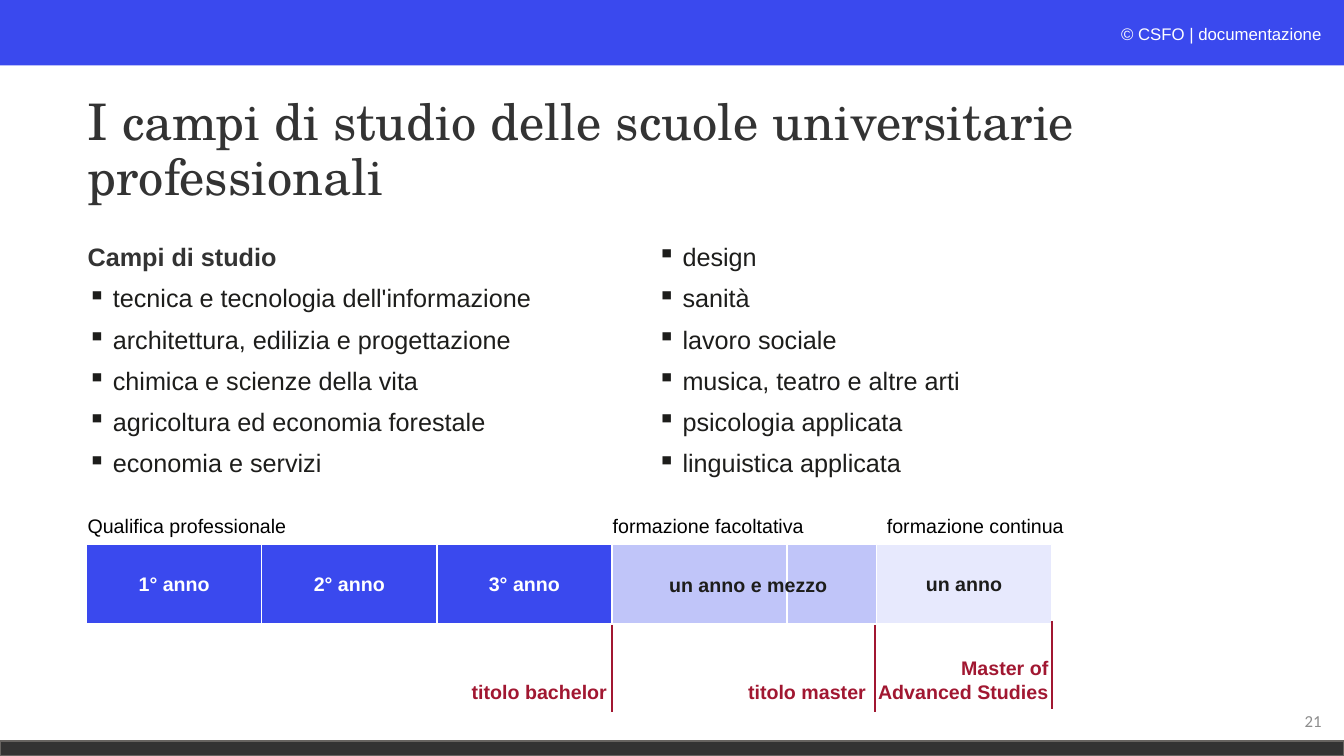
from dataclasses import dataclass

from lxml import etree
from pptx import Presentation
from pptx.dml.color import RGBColor
from pptx.enum.shapes import MSO_CONNECTOR, MSO_SHAPE
from pptx.enum.text import MSO_ANCHOR, PP_ALIGN
from pptx.oxml.ns import qn
from pptx.slide import Slide
from pptx.text.text import TextFrame, _Paragraph, _Run
from pptx.util import Emu, Inches, Pt

RECTANGLE = MSO_SHAPE.RECTANGLE
STRAIGHT = MSO_CONNECTOR.STRAIGHT
TOP, MIDDLE = MSO_ANCHOR.TOP, MSO_ANCHOR.MIDDLE
LEFT, CENTER, RIGHT = PP_ALIGN.LEFT, PP_ALIGN.CENTER, PP_ALIGN.RIGHT

SLIDE_WIDTH, SLIDE_HEIGHT = Inches(13.33), Inches(7.5)
TIMELINE_LEFT, YEAR = 6.45, 13.03
BAR_TOP, BAR_HEIGHT = 72, 10.53
MARGIN, CONTENT_WIDTH = 5.78, 86.25
LABEL_TOP, DEGREE_TOP, LABEL_HEIGHT = 67.33, 89.33, 4.53

COLORS = {
    "blue": "3A49EE",
    "lavender": "C0C5F9",
    "pale": "E7E9FD",
    "charcoal": "333333",
    "border": "666360",
    "ink": "1D1D1B",
    "black": "000000",
    "gray": "8C8C8C",
    "red": "A11731",
    "white": "FFFFFF",
    "near_white": "FCFDFE",
}

FORMATS = {
    "title": {"name": "TeX Gyre Schola", "size": Pt(36)},
    "heading": {"name": "Arial", "size": Pt(18), "bold": True},
    "field": {"name": "Arial", "size": Pt(18), "bold": False},
    "label": {"name": "Arial", "size": Pt(14), "bold": False},
    "strong": {"name": "Arial", "size": Pt(14), "bold": True},
    "copyright": {"name": "Arial", "size": Pt(12), "italic": True},
    "source": {"name": "Arial", "size": Pt(12), "italic": False},
    "number": {"name": "Calibri", "size": Pt(12)},
}

STUDY_FIELDS = (
    "tecnica e tecnologia dell'informazione",
    "architettura, edilizia e progettazione",
    "chimica e scienze della vita",
    "agricoltura ed economia forestale",
    "economia e servizi",
    "design",
    "sanità",
    "lavoro sociale",
    "musica, teatro e altre arti",
    "psicologia applicata",
    "linguistica applicata",
)


@dataclass(frozen=True)
class Area:
    left: float
    top: float
    width: float
    height: float

    def box(self) -> tuple[Emu, Emu, Emu, Emu]:
        return (across(self.left), down(self.top),
                across(self.width), down(self.height))


@dataclass(frozen=True)
class Band:
    area: Area
    fill: str
    border: str | None = None
    label: str = ""
    ink: str = "white"


@dataclass(frozen=True)
class Caption:
    lines: tuple[str, ...]
    area: Area
    look: str
    color: str
    align: PP_ALIGN = LEFT
    anchor: MSO_ANCHOR = TOP
    wrap: bool = False


@dataclass(frozen=True)
class Milestone:
    year: float
    top: float
    bottom: float


def across(percent: float) -> Emu:
    return Emu(round(SLIDE_WIDTH * percent / 100))


def down(percent: float) -> Emu:
    return Emu(round(SLIDE_HEIGHT * percent / 100))


def at_year(year: float) -> float:
    return TIMELINE_LEFT + YEAR * year


def stage(start: float, years: float, fill: str, label: str = "", ink: str = "white") -> Band:
    area = Area(at_year(start), BAR_TOP, YEAR * years, BAR_HEIGHT)
    return Band(area, fill, "white", label, ink)


def rgb(color: str) -> RGBColor:
    return RGBColor.from_string(COLORS[color])


def add_run(paragraph: _Paragraph, text: str, look: str, color: str) -> _Run:
    run = paragraph.add_run()
    run.text = text
    for attribute, value in FORMATS[look].items():
        setattr(run.font, attribute, value)
    run.font.color.rgb = rgb(color)
    return run


def next_paragraph(frame: TextFrame, index: int) -> _Paragraph:
    return frame.add_paragraph() if index else frame.paragraphs[0]


def draw_band(slide: Slide, band: Band) -> None:
    shape = slide.shapes.add_shape(RECTANGLE, *band.area.box())
    shape.shadow.inherit = False
    shape.fill.solid()
    shape.fill.fore_color.rgb = rgb(band.fill)
    if band.border:
        shape.line.color.rgb = rgb(band.border)
        shape.line.width = Pt(1)
    else:
        shape.line.fill.background()
    if band.label:
        shape.text_frame.vertical_anchor = MIDDLE
        paragraph = shape.text_frame.paragraphs[0]
        paragraph.alignment = CENTER
        add_run(paragraph, band.label, "strong", band.ink)


def draw_caption(slide: Slide, caption: Caption) -> TextFrame:
    frame = slide.shapes.add_textbox(*caption.area.box()).text_frame
    frame.word_wrap = caption.wrap
    frame.vertical_anchor = caption.anchor
    for index, line in enumerate(caption.lines):
        paragraph = next_paragraph(frame, index)
        paragraph.alignment = caption.align
        add_run(paragraph, line, caption.look, caption.color)
    return frame


def draw_study_fields(slide: Slide, area: Area) -> None:
    heading = Caption(("Campi di studio",), area, "heading", "charcoal", wrap=True)
    frame = draw_caption(slide, heading)
    frame._txBody.bodyPr.set("numCol", "2")
    frame.paragraphs[0].line_spacing = 0.9
    for field in STUDY_FIELDS:
        paragraph = frame.add_paragraph()
        properties = paragraph._p.get_or_add_pPr()
        properties.set("marL", str(Inches(0.25)))
        properties.set("indent", str(-Inches(0.25)))
        etree.SubElement(properties, qn("a:buChar"), char="▪")
        paragraph.line_spacing = 0.9
        paragraph.space_before = Pt(10)
        add_run(paragraph, field, "field", "ink")


def draw_milestone(slide: Slide, milestone: Milestone) -> None:
    x = across(at_year(milestone.year))
    line = slide.shapes.add_connector(STRAIGHT, x, down(milestone.top), x, down(milestone.bottom))
    line.line.color.rgb = rgb("red")
    line.line.width = Pt(1.5)
    etree.SubElement(line._element.spPr, qn("a:effectLst"))


BANDS = (
    Band(Area(0, 0, 100, 8.67), "blue"),
    Band(Area(0, 98, 100, 2), "charcoal", "border"),
    *(stage(year, 1, "blue", f"{year + 1}° anno") for year in range(3)),
    stage(3, 1, "lavender"),
    stage(4.51, 1, "pale", "un anno", "ink"),
    stage(4, 0.51, "lavender"),
)

COPYRIGHT = Caption(("© ",), Area(64.65, 2.53, 34.43, 4), "copyright", "near_white", RIGHT, wrap=True)

CAPTIONS = (
    Caption(("I campi di studio delle scuole universitarie professionali",),
            Area(MARGIN, 10.4, CONTENT_WIDTH, 19.33), "title", "charcoal", LEFT, MIDDLE, True),
    Caption(("21",), Area(76.58, 92.67, 22.5, 5.33), "number", "gray", RIGHT, MIDDLE, True),
    Caption(("un anno e mezzo",), Area(49.05, 75.07, 13.35, LABEL_HEIGHT), "strong", "ink"),
    Caption(("Qualifica professionale",), Area(MARGIN, LABEL_TOP, 16.35, LABEL_HEIGHT), "label", "black"),
    Caption(("formazione facoltativa",), Area(44.85, LABEL_TOP, 15.83, LABEL_HEIGHT), "label", "black"),
    Caption(("formazione continua",), Area(65.25, LABEL_TOP, 14.7, LABEL_HEIGHT), "label", "black"),
    Caption(("titolo bachelor",), Area(34.28, DEGREE_TOP, 11.63, LABEL_HEIGHT), "strong", "red", RIGHT),
    Caption(("titolo master",), Area(54.83, DEGREE_TOP, 10.35, LABEL_HEIGHT), "strong", "red", RIGHT),
    Caption(("Master of", "Advanced Studies"), Area(64.5, 86.13, 14.25, 7.6), "strong", "red", RIGHT),
)

MILESTONES = (
    Milestone(3, 82.67, 94.13),
    Milestone(4.5, 82.67, 94.13),
    Milestone(5.51, 82.13, 93.73),
)


def main() -> None:
    presentation = Presentation()
    presentation.slide_width, presentation.slide_height = SLIDE_WIDTH, SLIDE_HEIGHT
    slide = presentation.slides.add_slide(presentation.slide_layouts[6])
    for band in BANDS:
        draw_band(slide, band)
    copyright_line = draw_caption(slide, COPYRIGHT).paragraphs[0]
    add_run(copyright_line, "CSFO | documentazione", "source", "white")
    draw_study_fields(slide, Area(MARGIN, 31.73, CONTENT_WIDTH, 32.27))
    for caption in CAPTIONS:
        frame = draw_caption(slide, caption)
        if caption.look == "title":
            frame.paragraphs[0].line_spacing = 0.9
    for milestone in MILESTONES:
        draw_milestone(slide, milestone)
    presentation.save("out.pptx")


if __name__ == "__main__":
    main()
